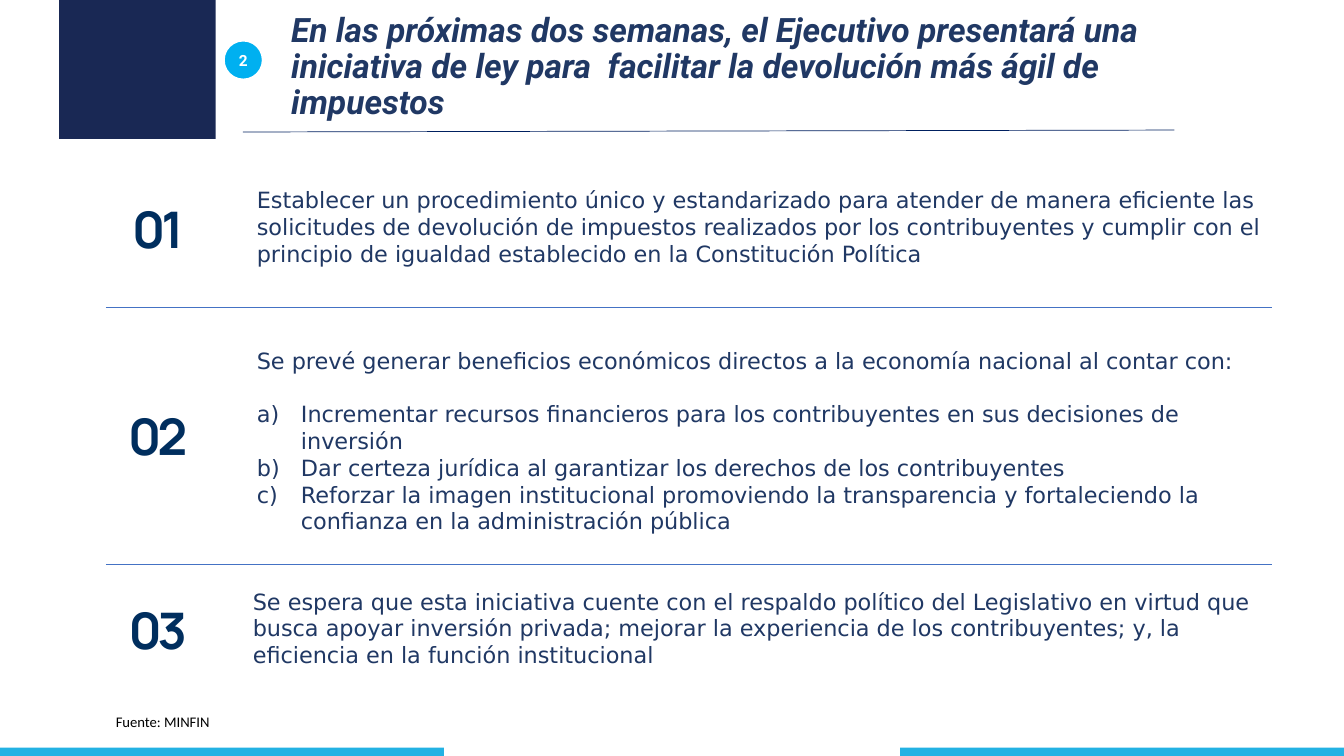
import pptx
import pptx.util
import pptx.dml.color
import pptx.enum.shapes
import pptx.enum.text
import lxml.etree

Pt = pptx.util.Pt
RGBColor = pptx.dml.color.RGBColor
Shape = pptx.enum.shapes.MSO_SHAPE
Anchor = pptx.enum.text.MSO_ANCHOR
Align = pptx.enum.text.PP_ALIGN

# Content
TITLE = ("En las próximas dos semanas, el Ejecutivo presentará una iniciativa de ley "
         "para  facilitar la devolución más ágil de impuestos")
BADGE = "2"
SOURCE = "Fuente: MINFIN"
# number, number top, text left, text top, text width, text height, intro, lettered points
SECTIONS = [
    ("01", 136.8, 176.4, 129.6, 732.2, 65.5,
     "Establecer un procedimiento único y estandarizado para atender de manera eficiente "
     "las solicitudes de devolución de impuestos realizados por los contribuyentes y cumplir "
     "con el principio de igualdad establecido en la Constitución Política", []),
    ("02", 285.1, 176.4, 244.1, 737.3, 143.3,
     "Se prevé generar beneficios económicos directos a la economía nacional al contar con:",
     ["Incrementar recursos financieros para los contribuyentes en sus decisiones de inversión",
      "Dar certeza jurídica al garantizar los derechos de los contribuyentes",
      "Reforzar la imagen institucional promoviendo la transparencia y fortaleciendo la "
      "confianza en la administración pública"]),
    ("03", 423.4, 173.5, 416.2, 737.3, 65.5,
     "Se espera que esta iniciativa cuente con el respaldo político del Legislativo en virtud "
     "que busca apoyar inversión privada; mejorar la experiencia de los contribuyentes; y, la "
     "eficiencia en la función institucional", []),
]
DIVIDER_TOPS = [219.6, 403.2]

# Colours
WHITE = RGBColor(0xFF, 0xFF, 0xFF)
BLACK = RGBColor(0, 0, 0)
NAVY_BLOCK = RGBColor(0x19, 0x28, 0x54)
CYAN_BAR = RGBColor(0x23, 0xB2, 0xE3)
BADGE_BLUE = RGBColor(0x00, 0xB0, 0xF0)
TITLE_RULE = RGBColor(0x00, 0x20, 0x60)
DIVIDER_BLUE = RGBColor(0x44, 0x72, 0xC4)
TEXT_BLUE = RGBColor(0x20, 0x38, 0x64)
NUMBER_BLUE = RGBColor(0x00, 0x2E, 0x5E)

# Layout
WIDTH, HEIGHT = 960, 540
BAR_WIDTH, BAR_HEIGHT = 317, 6
INDENT = 31.5
BLANK_LINE = 19

deck = pptx.Presentation()
deck.slide_width, deck.slide_height = Pt(WIDTH), Pt(HEIGHT)
page = deck.slides.add_slide(deck.slide_layouts[6])


def add_block(kind, left, top, width, height, color):
    block = page.shapes.add_shape(kind, Pt(left), Pt(top), Pt(width), Pt(height))
    block.shadow.inherit = False
    block.fill.solid()
    block.fill.fore_color.rgb = color
    block.line.fill.background()
    return block


def add_rule(x1, y1, x2, y2, color, weight):
    rule = page.shapes.add_connector(
        pptx.enum.shapes.MSO_CONNECTOR.STRAIGHT, Pt(x1), Pt(y1), Pt(x2), Pt(y2))
    rule.line.color.rgb = color
    rule.line.width = Pt(weight)
    properties = rule.line._get_or_add_ln().getparent()
    lxml.etree.SubElement(properties, pptx.oxml.ns.qn("a:effectLst"))


def style(para, font, size, color, bold=False, italic=False):
    for span in para.runs:
        span.font.name = font
        span.font.size = Pt(size)
        span.font.color.rgb = color
        span.font.bold = bold
        span.font.italic = italic


def add_text(left, top, width, height, text, *look, anchor=Anchor.TOP):
    box = page.shapes.add_textbox(Pt(left), Pt(top), Pt(width), Pt(height))
    frame = box.text_frame
    frame.word_wrap = True
    frame.vertical_anchor = anchor
    frame.text = text
    style(frame.paragraphs[0], *look)
    return frame


def add_letter(para):
    properties = para._p.get_or_add_pPr()
    properties.set("marL", str(Pt(INDENT)))
    properties.set("indent", str(-Pt(INDENT)))
    lxml.etree.SubElement(properties, pptx.oxml.ns.qn("a:buAutoNum"), type="alphaLcParenR")


# Footer bars and corner block
for bar_left in (0, WIDTH - BAR_WIDTH):
    add_block(Shape.RECTANGLE, bar_left, HEIGHT - BAR_HEIGHT, BAR_WIDTH, BAR_HEIGHT, CYAN_BAR)
add_block(Shape.RECTANGLE, 42.3, 0, 111.8, 99.3, NAVY_BLOCK)

# Numbered badge
badge = add_block(Shape.OVAL, 159.8, 28.9, 28, 28, BADGE_BLUE)
badge.line.color.rgb = WHITE
badge.line.width = Pt(1.5)
badge_frame = badge.text_frame
badge_frame.margin_left = badge_frame.margin_right = 0
badge_frame.margin_top = badge_frame.margin_bottom = 0
badge_frame.vertical_anchor = Anchor.MIDDLE
badge_frame.text = BADGE
badge_frame.paragraphs[0].alignment = Align.CENTER
style(badge_frame.paragraphs[0], "Roboto", 11, WHITE, True)

# Title
add_rule(173.5, 94.3, 838.8, 92.9, TITLE_RULE, 0.5)
title = add_text(200.9, 58.3, 658, 32.4, TITLE, "Roboto", 24, TEXT_BLUE, True, True,
                 anchor=Anchor.BOTTOM)
title.paragraphs[0].line_spacing = 0.9

# Sections
for number, number_top, left, top, width, height, intro, points in SECTIONS:
    label = add_text(82.1, number_top, 61.2, 51.1, number, "Manrope", 36, NUMBER_BLUE, True,
                     anchor=Anchor.BOTTOM).paragraphs[0]
    label.alignment = Align.CENTER
    label.runs[0].font._element.set("spc", "-290")
    body = add_text(left, top, width, height, intro, "DejaVu Sans", 16, TEXT_BLUE)
    if points:
        body.paragraphs[0].space_after = Pt(BLANK_LINE)
    for point in points:
        para = body.add_paragraph()
        add_letter(para)
        para.text = point
        style(para, "DejaVu Sans", 16, TEXT_BLUE)

# Dividers and source
for divider_top in DIVIDER_TOPS:
    add_rule(75.6, divider_top, 908.6, divider_top, DIVIDER_BLUE, 1)
add_text(75.6, 505.4, 251.3, 20.2, SOURCE, "Calibri", 10.5, BLACK)

deck.save("out.pptx")
